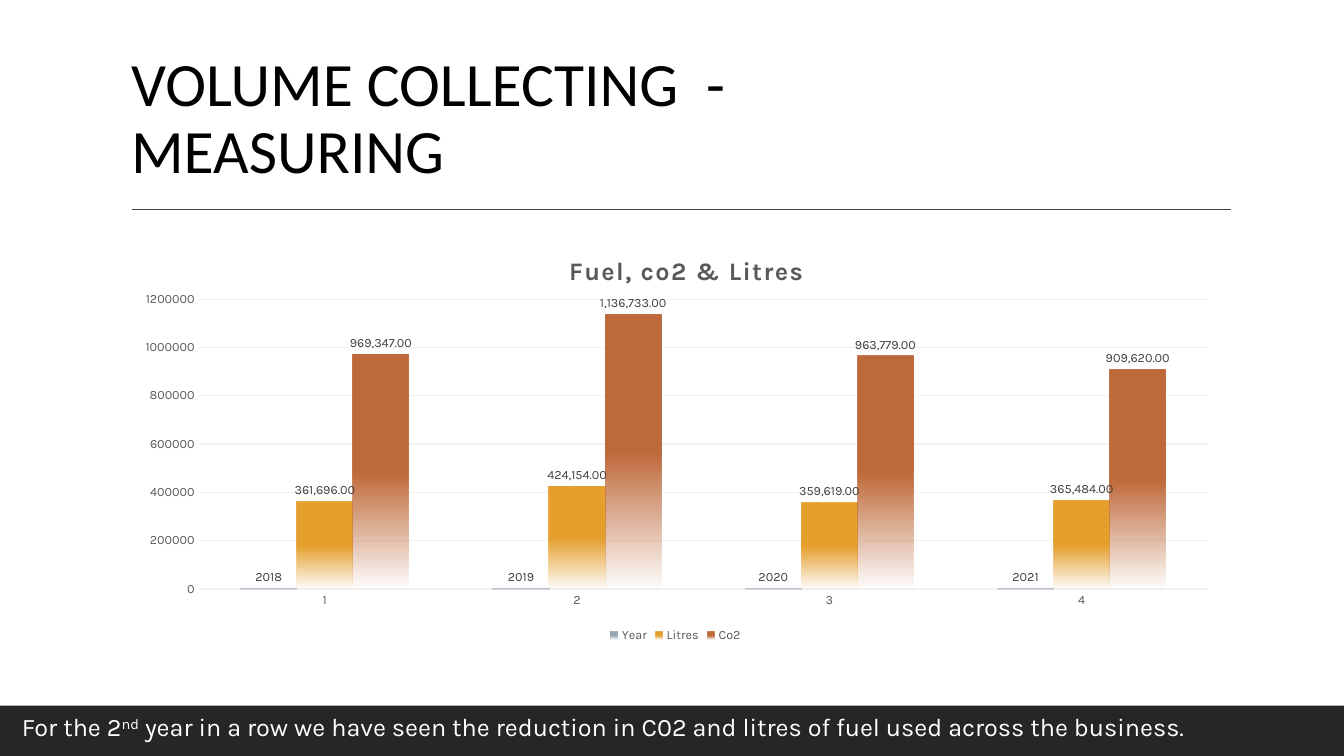
import lxml.etree
import pptx
import pptx.chart.data
import pptx.dml.color
import pptx.enum.chart
import pptx.enum.shapes
import pptx.enum.text
import pptx.oxml.ns
import pptx.util

Inches = pptx.util.Inches
Pt = pptx.util.Pt
qn = pptx.oxml.ns.qn

COLORS = {
    "title": "000000", "rule": "404040", "band": "262626", "footer": "FFFFFF",
    "axis": "595959", "label": "404040", "grid": "F2F2F2",
    "Year": "9BA8B7", "Litres": "E6A02E", "Co2": "BF6A3B",
}
FUEL_USE = {
    "Year": (2018, 2019, 2020, 2021),
    "Litres": (361696, 424154, 359619, 365484),
    "Co2": (969347, 1136733, 963779, 909620),
}


def rgb(name):
    return pptx.dml.color.RGBColor.from_string(COLORS[name])


def set_layout(parent, position, **fractions):
    """Place a chart part by fractions of the chart; position is its index in parent."""
    for old in parent.findall(qn("c:layout")):
        parent.remove(old)
    layout = lxml.etree.Element(qn("c:layout"))
    manual = lxml.etree.SubElement(layout, qn("c:manualLayout"))
    for tag, value in fractions.items():
        lxml.etree.SubElement(manual, qn(f"c:{tag}")).set("val", str(value))
    parent.insert(position, layout)


class SlideBuilder:
    def __init__(self, slide, heading_font, body_font):
        self.slide = slide
        self.heading_font = heading_font
        self.body_font = body_font

    def style(self, font, size, color, bold=False):
        font.name = self.body_font
        font.size = Pt(size)
        font.bold = bold
        font.color.rgb = rgb(color)

    def title(self, text, box):
        heading = self.slide.shapes.title
        heading.left, heading.top, heading.width, heading.height = map(Inches, box)
        frame = heading.text_frame
        frame.text = text
        frame.word_wrap = True
        frame.auto_size = pptx.enum.text.MSO_AUTO_SIZE.NONE
        frame.vertical_anchor = pptx.enum.text.MSO_ANCHOR.BOTTOM
        for paragraph in frame.paragraphs:
            paragraph.alignment = pptx.enum.text.PP_ALIGN.LEFT
            paragraph.line_spacing = 0.9
            for run in paragraph.runs:
                self.style(run.font, 44, "title")
                run.font.name = self.heading_font

    def band(self, box):
        band = self.slide.shapes.add_shape(
            pptx.enum.shapes.MSO_SHAPE.RECTANGLE, *map(Inches, box))
        band.shadow.inherit = False
        band.fill.solid()
        band.fill.fore_color.rgb = rgb("band")
        band.line.fill.background()

    def rule(self, left, right, y):
        rule = self.slide.shapes.add_connector(
            pptx.enum.shapes.MSO_CONNECTOR.STRAIGHT,
            Inches(left), Inches(y), Inches(right), Inches(y))
        rule.line.color.rgb = rgb("rule")
        rule.line.width = Pt(1)
        lxml.etree.SubElement(rule._element.spPr, qn("a:effectLst"))

    def footer(self, parts, box):
        """Write one line from (text, baseline percent) parts."""
        frame = self.slide.shapes.add_textbox(*map(Inches, box)).text_frame
        frame.word_wrap = True
        for text, baseline in parts:
            run = frame.paragraphs[0].add_run()
            run.text = text
            self.style(run.font, 18, "footer")
            if baseline:
                run._r.get_or_add_rPr().set("baseline", str(baseline * 1000))

    def column_chart(self, title, categories, values, box):
        data = pptx.chart.data.CategoryChartData()
        data.categories = categories
        for name, numbers in values.items():
            data.add_series(name, numbers)
        chart = self.slide.shapes.add_chart(
            pptx.enum.chart.XL_CHART_TYPE.COLUMN_CLUSTERED,
            *map(Inches, box), data).chart
        self.style(chart.font, 10, "title")
        self.chart_title(chart, title)
        self.axes(chart)
        chart.has_legend = True
        chart.legend.position = pptx.enum.chart.XL_LEGEND_POSITION.BOTTOM
        chart.legend.include_in_layout = False
        self.style(chart.legend.font, 9, "axis")
        plot = chart.plots[0]
        plot.gap_width = 150
        plot.overlap = 0
        plot.vary_by_categories = False
        for series in plot.series:
            self.fading_fill(series)
            self.value_labels(series)
        set_layout(chart._chartSpace.chart.plotArea, 0, layoutTarget="inner",
                   xMode="edge", yMode="edge", x=0.07, y=0.16, w=0.91, h=0.7)

    def chart_title(self, chart, text):
        chart.has_title = True
        frame = chart.chart_title.text_frame
        frame.text = text
        run = frame.paragraphs[0].runs[0]
        self.style(run.font, 18, "axis", bold=True)
        run._r.get_or_add_rPr().set("spc", "100")
        set_layout(chart.chart_title._element, 1,
                   xMode="edge", yMode="edge", x=0.4, y=0.04)

    def axes(self, chart):
        for axis in (chart.category_axis, chart.value_axis):
            axis.major_tick_mark = pptx.enum.chart.XL_TICK_MARK.NONE
            axis.minor_tick_mark = pptx.enum.chart.XL_TICK_MARK.NONE
            axis.format.line.fill.background()
            self.style(axis.tick_labels.font, 9, "axis")
        value_axis = chart.value_axis
        value_axis.minimum_scale = 0
        value_axis.maximum_scale = 1200000
        value_axis.major_unit = 200000
        value_axis.tick_labels.number_format = "0"
        value_axis.tick_labels.number_format_is_linked = False
        grid = value_axis.major_gridlines.format.line
        grid.color.rgb = rgb("grid")
        grid.width = Pt(0.75)

    def fading_fill(self, series):
        """Fill columns with a colour that turns transparent in the lower half."""
        fill = series.format.fill
        fill.gradient()
        fill.gradient_angle = 270
        for stop, position in zip(fill.gradient_stops, (0.5, 1)):
            stop.position = position
            stop.color.rgb = rgb(series.name)
        last_color = series._element.findall(".//" + qn("a:gs"))[-1][0]
        lxml.etree.SubElement(last_color, qn("a:alpha")).set("val", "0")

    def value_labels(self, series):
        labels = series.data_labels
        labels.show_value = True
        labels.position = pptx.enum.chart.XL_LABEL_POSITION.OUTSIDE_END
        labels.number_format = "0" if series.name == "Year" else "#,##0.00"
        labels.number_format_is_linked = False
        self.style(labels.font, 9, "label")


def main():
    deck = pptx.Presentation()
    deck.slide_width, deck.slide_height = Inches(13.33), Inches(7.5)
    builder = SlideBuilder(deck.slides.add_slide(deck.slide_layouts[5]), "Calibri", "Karla")
    builder.band((0, 7, 13.33, 0.5))
    builder.rule(1.31, 12.21, 2.08)
    builder.title("VOLUME COLLECTING  -\vMEASURING", (1.2, 0.31, 11, 1.59))
    builder.column_chart("Fuel, co2 & Litres", ("1", "2", "3", "4"), FUEL_USE,
                         (1.2, 2.31, 11, 4.11))
    builder.footer((
        ("For the 2", 0), ("nd", 30),
        (" year in a row we have seen the reduction in C02 and litres of fuel "
         "used across the business.", 0),
    ), (0.12, 7.01, 13.04, 0.4))
    deck.save("out.pptx")


if __name__ == "__main__":
    main()
